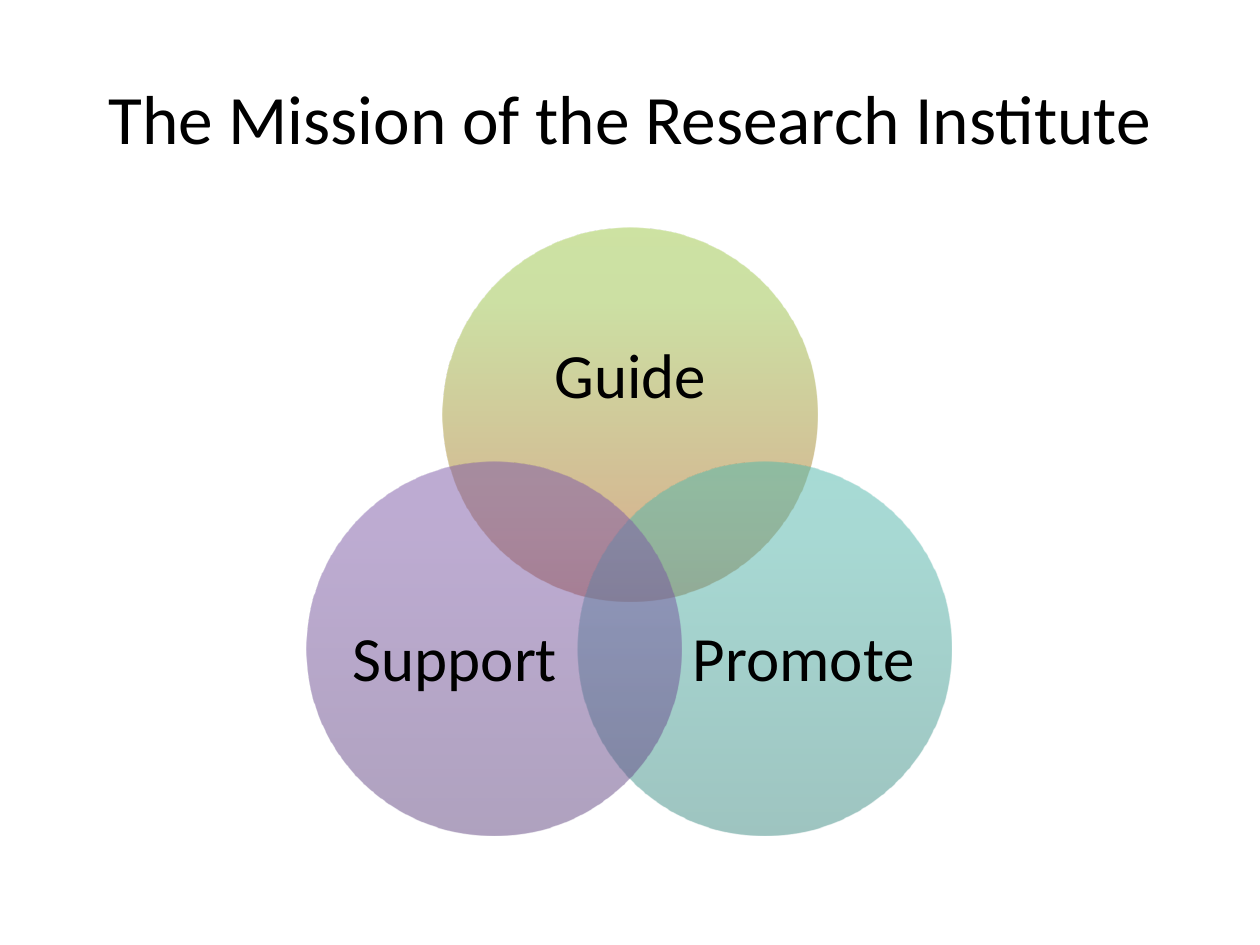
"""Build a slide with a three-circle Venn diagram of an institute's mission."""
from copy import deepcopy

from lxml.etree import SubElement
from pptx import Presentation
from pptx.dml.color import RGBColor
from pptx.enum.shapes import MSO_SHAPE
from pptx.enum.text import MSO_ANCHOR, PP_ALIGN
from pptx.oxml.ns import qn
from pptx.util import Emu, Pt

PX = 914400 / 126
BLACK = RGBColor(0x00, 0x00, 0x00)
GREENS = RGBColor(0xB2, 0x53, 0x18), RGBColor(0x9B, 0xC3, 0x48), RGBColor(0x9D, 0xC7, 0x46)
TEALS = RGBColor(0x3D, 0x8B, 0x83), RGBColor(0x50, 0xB5, 0xAA), RGBColor(0x4E, 0xB8, 0xAC)
PURPLES = RGBColor(0x5F, 0x44, 0x80), RGBColor(0x7B, 0x58, 0xA6), RGBColor(0x7C, 0x57, 0xA8)
STOP_POSITIONS = 0, 0.8, 1
HALF_OPAQUE = "50000"
DIAMETER = 374

LABEL_FRAME = {"margin_left": 0, "margin_right": 0, "margin_top": 0, "margin_bottom": 0}
LABEL_PARA = {"line_spacing": 0.9, "space_after": Pt(12.6)}


def px(*lengths):
    return [Emu(round(length * PX)) for length in lengths]


def add_text(shapes, place, text, size, frame_format, para_format):
    box = shapes.add_textbox(*px(*place))
    frame = box.text_frame
    para = frame.paragraphs[0]
    span = para.add_run()
    span.text = text
    span.font.color.rgb = BLACK
    for target, values in (
        (frame, {"word_wrap": True, "vertical_anchor": MSO_ANCHOR.MIDDLE, **frame_format}),
        (para, {"alignment": PP_ALIGN.CENTER, **para_format}),
        (span.font, {"name": "Calibri", "size": Pt(size)}),
    ):
        for name, value in values.items():
            setattr(target, name, value)


deck = Presentation()
deck.slide_width, deck.slide_height = px(1260, 945)
page = deck.slides.add_slide(deck.slide_layouts[6])

add_text(page.shapes, (63, 38, 1134, 158), "The Mission of the Research Institute", 39.6, {}, {})

venn = page.shapes.add_group_shape()
for label, colors, corner, label_place in (
    ("Guide", GREENS, (443, 228), (493, 294, 275, 169)),
    ("Promote", TEALS, (578, 462), (692, 559, 224, 205)),
    ("Support", PURPLES, (307, 462), (343, 559, 224, 205)),
):
    circle = venn.shapes.add_shape(MSO_SHAPE.OVAL, *px(*corner, DIAMETER, DIAMETER))
    circle.shadow.inherit = False
    circle.line.fill.background()
    circle.fill.gradient()
    circle.fill.gradient_angle = 90
    first_stop = circle._element.spPr.find(".//" + qn("a:gs"))
    first_stop.addnext(deepcopy(first_stop))
    for stop, position, color in zip(circle.fill.gradient_stops, STOP_POSITIONS, colors):
        stop.position = position
        stop.color.rgb = color
    for tint in circle._element.spPr.iter(qn("a:srgbClr")):
        SubElement(tint, qn("a:alpha")).set("val", HALF_OPAQUE)
    add_text(venn.shapes, label_place, label, 36, LABEL_FRAME, LABEL_PARA)

deck.save("out.pptx")
